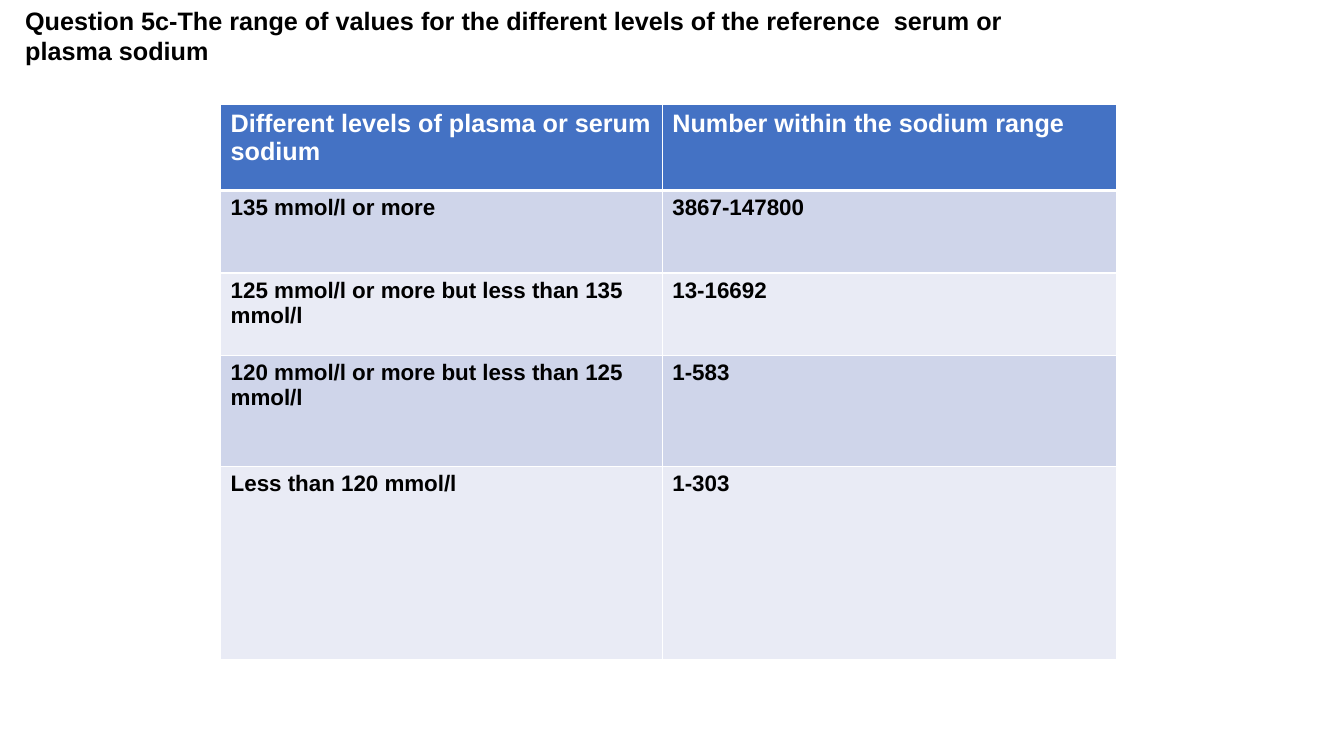
from pptx import Presentation
from pptx import util as u
from pptx.dml import color
from pptx.enum import text
from pptx.oxml import parse_xml
from pptx.oxml.ns import nsdecls

FONT = "Arial"
WHITE, BLACK, HEADER_BLUE = "FFFFFF", "000000", "4472C4"
BANDS = ["CFD5EA", "E9EBF5"]
COLUMN_WIDTHS = [11.13, 11.46]
ROW_HEIGHTS = [2.16, 2.08, 2.08, 2.79, 4.88]
SODIUM_RANGES = [
    ("Different levels of plasma or serum sodium", "Number within the sodium range"),
    ("135 mmol/l or more", "3867-147800"),
    ("125 mmol/l or more but less than 135 mmol/l", "13-16692"),
    ("120 mmol/l or more but less than 125 mmol/l", "1-583"),
    ("Less than 120 mmol/l", "1-303"),
]


def rgb(value):
    """Turn a hex string into a colour."""
    return color.RGBColor.from_string(value)


def style_paragraph(paragraph, size, ink):
    """Set a left-aligned bold paragraph in the slide font."""
    paragraph.alignment = text.PP_ALIGN.LEFT
    paragraph.font.name = FONT
    paragraph.font.size = u.Pt(size)
    paragraph.font.bold = True
    paragraph.font.color.rgb = rgb(ink)


def add_question(slide, wording):
    """Place and format the question in the title placeholder."""
    question = slide.shapes.title
    question.left, question.top = u.Cm(0.38), u.Cm(0)
    question.width, question.height = u.Cm(26.39), u.Cm(1.8)
    frame = question.text_frame
    frame.text = wording
    frame.word_wrap = True
    frame.auto_size = text.MSO_AUTO_SIZE.SHAPE_TO_FIT_TEXT
    frame.vertical_anchor = text.MSO_ANCHOR.TOP
    style_paragraph(frame.paragraphs[0], 18, BLACK)


def add_border(cell, side, points):
    """Draw a white border on one side of a cell."""
    cell._tc.get_or_add_tcPr().append(parse_xml(
        f'<a:ln{side} {nsdecls("a")} w="{u.Pt(points)}"><a:solidFill>'
        f'<a:srgbClr val="{WHITE}"/></a:solidFill></a:ln{side}>'))


def fill_cell(cell, wording, row):
    """Write a cell and colour it according to its row."""
    header = row == 0
    for side in "LRTB":
        thick = (header and side == "B") or (row == 1 and side == "T")
        add_border(cell, side, 3 if thick else 1)
    cell.fill.solid()
    cell.fill.fore_color.rgb = rgb(HEADER_BLUE if header else BANDS[(row - 1) % 2])
    cell.text = wording
    style_paragraph(cell.text_frame.paragraphs[0], 18 if header else 16,
                    WHITE if header else BLACK)


def add_sodium_table(slide):
    """Add the table of sodium levels and their ranges."""
    table = slide.shapes.add_table(
        len(ROW_HEIGHTS), len(COLUMN_WIDTHS), u.Cm(5.56), u.Cm(2.64),
        u.Cm(sum(COLUMN_WIDTHS)), u.Cm(sum(ROW_HEIGHTS))).table
    for column, width in zip(table.columns, COLUMN_WIDTHS):
        column.width = u.Cm(width)
    for row, (height, entries) in enumerate(zip(ROW_HEIGHTS, SODIUM_RANGES)):
        table.rows[row].height = u.Cm(height)
        for column, wording in enumerate(entries):
            fill_cell(table.cell(row, column), wording, row)


def main():
    """Build and save the sodium slide."""
    deck = Presentation()
    deck.slide_width, deck.slide_height = u.Cm(33.87), u.Cm(19.05)
    slide = deck.slides.add_slide(deck.slide_layouts[5])
    add_question(slide, "Question 5c-The range of values for the different levels "
                        "of the reference  serum or plasma sodium")
    add_sodium_table(slide)
    deck.save("out.pptx")


if __name__ == "__main__":
    main()
